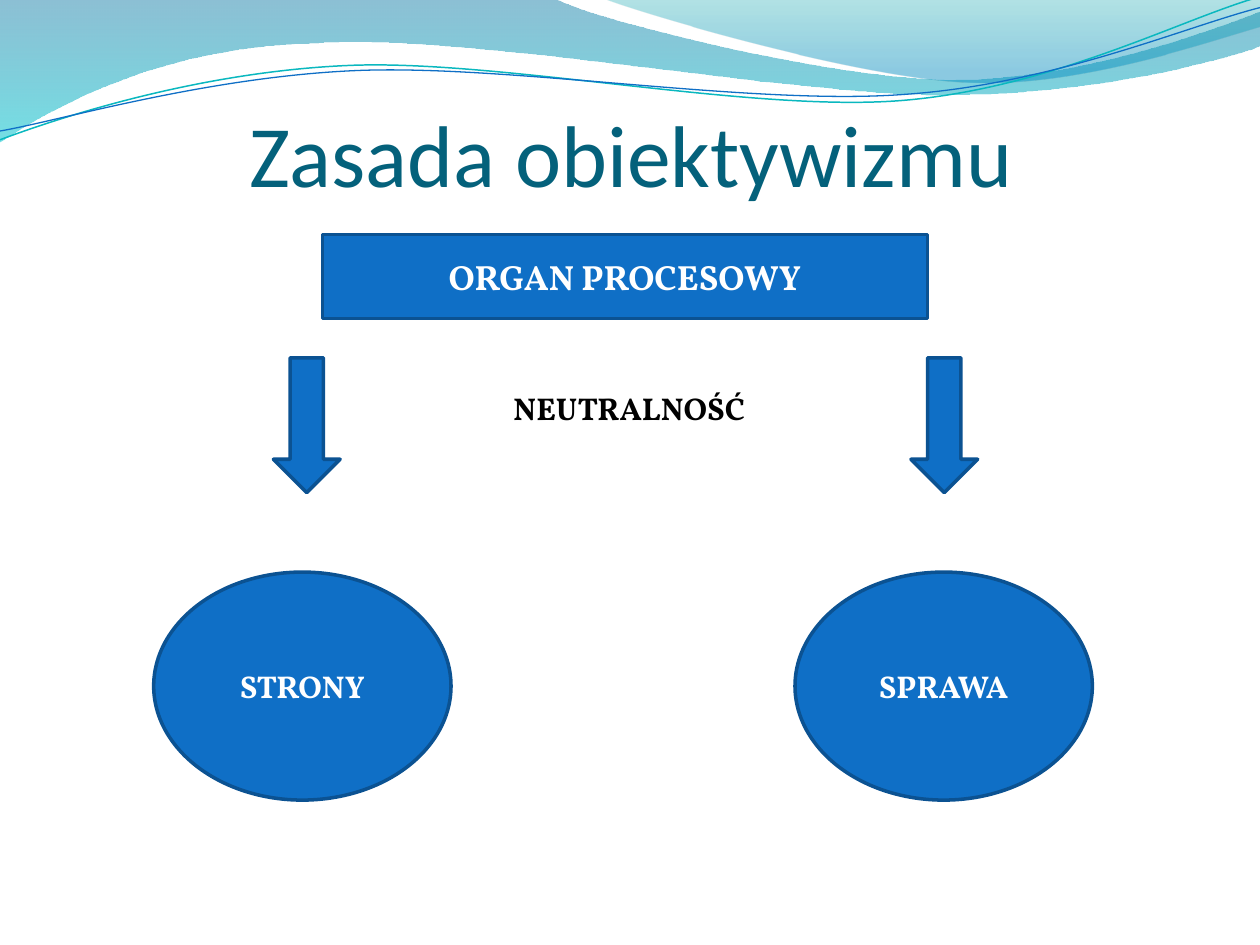
from dataclasses import dataclass
from math import cos, radians, sin

from lxml.etree import SubElement
from pptx import Presentation
from pptx.dml.color import RGBColor
from pptx.enum.shapes import MSO_SHAPE as Preset
from pptx.enum.text import MSO_ANCHOR as Anchor, MSO_AUTO_SIZE as AutoSize, PP_ALIGN as Align
from pptx.oxml.ns import qn
from pptx.util import Inches, Pt

Point = tuple[float, float]
BLUE, DARK_BLUE = "0F6FC6", "0B5292"
WAVE_TILT = -2.7


@dataclass
class Label:
    text: str
    size: float
    color: str = "FFFFFF"
    font: str = "Vollkorn"
    bold: bool = True


@dataclass
class Box:
    left: float
    top: float
    width: float
    height: float


@dataclass
class Stop:
    position: float
    color: str
    opacity: int


@dataclass
class Outline:
    box: Box
    start: Point
    segments: list[tuple[Point, ...]]


@dataclass
class Band(Outline):
    stops: tuple[Stop, Stop]


@dataclass
class Wave(Outline):
    color: str
    width: float


BANDS = [
    Band(
        Box(-0.01, -0.01, 10.02, 1.14),
        (0, 0),
        [
            ((4.4, -0.01),),
            ((4.76, 0.17), (6.64, 0.63), (7.58, 0.63)),
            ((8.53, 0.63), (9.58, 0.26), (10, 0.09)),
            ((10.01, 0.36),),
            ((9.83, 0.44), (8.7, 0.76), (7.46, 0.75)),
            ((6.22, 0.75), (3.82, 0.28), (2.57, 0.34)),
            ((1.29, 0.36), (0.46, 0.83), (-0.01, 1.13)),
            ((0, 0),),
        ],
        (Stop(0, "0074A1", 45), Stop(1, "00C6CF", 55)),
    ),
    Band(
        Box(4.79, -0.01, 5.21, 0.7),
        (4.79, -0.01),
        [
            ((5.09, 0.11), (6.82, 0.62), (7.69, 0.65)),
            ((8.56, 0.69), (9.61, 0.32), (10, 0.21)),
            ((10, 0),),
            ((4.79, -0.01),),
        ],
        (Stop(0, "00A1A9", 30), Stop(0.8, "008BBF", 45)),
    ),
]
WAVES = [
    Wave(
        Box(-0.02, 0.22, 10.02, 0.71),
        (0, 1.11),
        [
            ((0.48, 0.93), (1.58, 0.57), (2.77, 0.52)),
            ((3.95, 0.47), (5.93, 0.89), (7.13, 0.8)),
            ((8.33, 0.71), (9.38, 0.15), (9.98, -0.02)),
        ],
        "0AB8BF",
        0.85,
    ),
    Wave(
        Box(-0.02, 0.3, 10.03, 0.58),
        (0, 1.04),
        [
            ((0.47, 0.96), (1.64, 0.61), (2.83, 0.56)),
            ((4.03, 0.51), (5.97, 0.84), (7.17, 0.75)),
            ((8.36, 0.67), (9.41, 0.21), (10, 0.06)),
        ],
        BLUE,
        0.75,
    ),
]


def rgb(color: str) -> RGBColor:
    return RGBColor.from_string(color)


def local_point(point: Point, box: Box, tilt: float) -> Point:
    angle = radians(-tilt)
    x = point[0] - box.left - box.width / 2
    y = point[1] - box.top - box.height / 2
    return x * cos(angle) - y * sin(angle) + box.width / 2, x * sin(angle) + y * cos(angle) + box.height / 2


def draw_outline(slide, outline: Outline, tilt: float = 0):
    box = outline.box
    corners = [(Inches(x), Inches(y)) for x, y in (outline.start, outline.segments[0][-1])]
    builder = slide.shapes.build_freeform(*corners[0])
    builder.add_line_segments(corners[1:], close=False)
    shape = builder.convert_to_shape()
    shape.shadow.inherit = False
    shape.left, shape.top, shape.width, shape.height = place(box)
    shape.rotation = tilt
    route = next(shape.element.spPr.iter(qn("a:path")))
    for child in list(route):
        route.remove(child)
    route.set("w", str(shape.width))
    route.set("h", str(shape.height))
    steps = [("a:moveTo", (outline.start,))]
    steps += [("a:lnTo" if len(points) == 1 else "a:cubicBezTo", points) for points in outline.segments]
    for tag, points in steps:
        step = SubElement(route, qn(tag))
        for point in points:
            x, y = local_point(point, box, tilt)
            SubElement(step, qn("a:pt"), x=str(Inches(x)), y=str(Inches(y)))
    if outline.segments[-1][-1] == outline.start:
        SubElement(route, qn("a:close"))
    return shape


def draw_band(slide, band: Band) -> None:
    shape = draw_outline(slide, band)
    shape.line.fill.background()
    shape.fill.gradient()
    shape.fill.gradient_angle = 270
    for target, stop in zip(shape.fill.gradient_stops, band.stops):
        target.position = stop.position
        target.color.rgb = rgb(stop.color)
    colors = list(shape.element.spPr.iter(qn("a:srgbClr")))
    for element, stop in zip(colors, band.stops):
        SubElement(element, qn("a:alpha"), val=str(stop.opacity * 1000))


def draw_wave(slide, wave: Wave) -> None:
    shape = draw_outline(slide, wave, WAVE_TILT)
    shape.fill.background()
    shape.line.color.rgb = rgb(wave.color)
    shape.line.width = Pt(wave.width)


def write_label(frame, label: Label) -> None:
    frame.word_wrap = True
    paragraph = frame.paragraphs[0]
    paragraph.alignment = Align.CENTER
    run = paragraph.add_run()
    run.text = label.text
    run.font.name = label.font
    run.font.size = Pt(label.size)
    run.font.bold = label.bold
    run.font.color.rgb = rgb(label.color)


def place(box: Box) -> tuple:
    return Inches(box.left), Inches(box.top), Inches(box.width), Inches(box.height)


def add_text(slide, box: Box, label: Label):
    frame = slide.shapes.add_textbox(*place(box)).text_frame
    write_label(frame, label)
    return frame


def add_block(slide, preset: Preset, box: Box, label: Label | None = None) -> None:
    shape = slide.shapes.add_shape(preset, *place(box))
    shape.shadow.inherit = False
    shape.fill.solid()
    shape.fill.fore_color.rgb = rgb(BLUE)
    shape.line.color.rgb = rgb(DARK_BLUE)
    shape.line.width = Pt(2)
    if label:
        shape.text_frame.vertical_anchor = Anchor.MIDDLE
        write_label(shape.text_frame, label)


def main() -> None:
    presentation = Presentation()
    presentation.slide_width, presentation.slide_height = Inches(10), Inches(7.5)
    slide = presentation.slides.add_slide(presentation.slide_layouts[6])
    for band in BANDS:
        draw_band(slide, band)
    for wave in WAVES:
        draw_wave(slide, wave)
    title = add_text(slide, Box(0.51, 0.38, 9, 1.25), Label("Zasada obiektywizmu", 50, "04617B", "Calibri", False))
    title.vertical_anchor = Anchor.BOTTOM
    title.margin_left = title.margin_right = title.margin_bottom = 0
    for left in (2.17, 7.23):
        add_block(slide, Preset.DOWN_ARROW, Box(left, 2.84, 0.53, 1.07))
    neutrality = add_text(slide, Box(3.58, 3.04, 2.83, 0.4), Label("NEUTRALNOŚĆ", 18, "000000"))
    neutrality.auto_size = AutoSize.SHAPE_TO_FIT_TEXT
    add_block(slide, Preset.FLOWCHART_PROCESS, Box(2.56, 1.86, 4.8, 0.67), Label("ORGAN PROCESOWY", 20))
    for left, text in ((1.22, "STRONY"), (6.31, "SPRAWA")):
        add_block(slide, Preset.FLOWCHART_CONNECTOR, Box(left, 4.54, 2.36, 1.81), Label(text, 18))
    presentation.save("out.pptx")


if __name__ == "__main__":
    main()
